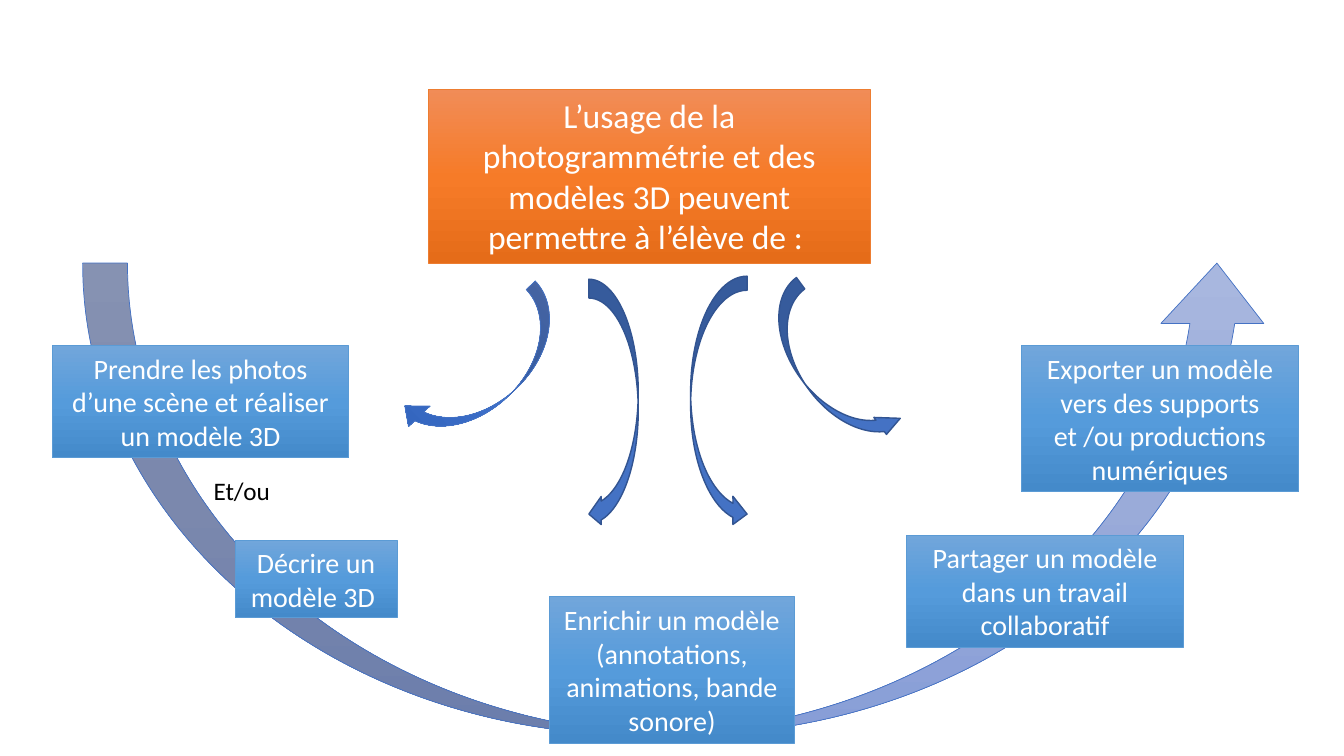
from dataclasses import dataclass

from lxml import etree
from pptx import Presentation
from pptx.dml.color import RGBColor
from pptx.enum.shapes import MSO_SHAPE
from pptx.enum.text import MSO_ANCHOR, MSO_AUTO_SIZE, PP_ALIGN
from pptx.util import Inches, Pt

RECT = MSO_SHAPE.RECTANGLE
UP = MSO_SHAPE.CURVED_UP_ARROW
LEFT = MSO_SHAPE.CURVED_LEFT_ARROW
RIGHT = MSO_SHAPE.CURVED_RIGHT_ARROW
TOP = MSO_ANCHOR.TOP
MIDDLE = MSO_ANCHOR.MIDDLE
FIXED = MSO_AUTO_SIZE.NONE
CENTER = PP_ALIGN.CENTER
START = PP_ALIGN.LEFT


@dataclass(frozen=True)
class Theme:
    """Colours, type sizes and line widths of the slide."""

    font: str = "Calibri"
    head: int = 24
    body: int = 20
    note: int = 18
    white: str = "FFFFFF"
    black: str = "000000"
    blue: str = "4472C4"
    navy: str = "325491"
    sky: str = "5B9BD5"
    orange: str = "ED7D31"
    sweep: tuple = ("A8B7DF", "9AABD9", "889ED7")
    step: tuple = ("71A6DB", "559BDB", "448ACA")
    title: tuple = ("F18C57", "F67B28", "E56C19")
    curve: tuple = ("6183CB", "3E70CA", "3062BB")
    thin: float = 0.5
    bold: float = 1


THEME = Theme()

STEPS = [
    ((0.52, 3.43, 2.94, 1.11), "Prendre les photos d’une scène et réaliser un modèle 3D"),
    ((2.33, 5.36, 1.61, 0.77), "Décrire un modèle 3D "),
    ((5.45, 5.92, 2.43, 1.45), "Enrichir un modèle (annotations, animations, bande sonore)"),
    ((8.99, 5.31, 2.75, 1.11), "Partager un modèle dans un travail collaboratif"),
    ((10.13, 3.43, 2.75, 1.45), "Exporter un modèle vers des supports et /ou productions numériques"),
]

ARROWS = [
    (RIGHT, (7.94, 2.74, 0.56, 1.84), 323.6, (0.25, 0.375, 0.366)),
    (LEFT, (5.84, 2.77, 0.49, 2.47), 0, (0.382, 0.569, 0.25)),
    (RIGHT, (6.85, 2.74, 0.56, 2.5), 0, (0.25, 0.5, 0.25)),
]


def shade(shape, tones):
    """Fill a shape with an even gradient from top to bottom."""
    shape.fill.gradient()
    grad = shape.fill._fill._gradFill
    stops = grad.gsLst
    tag = stops[0].tag
    for stop in list(stops):
        stops.remove(stop)
    for i, tone in enumerate(tones):
        stop = etree.SubElement(stops, tag, pos=str(i * 100000 // (len(tones) - 1)))
        etree.SubElement(stop, tag.replace("}gs", "}srgbClr"), val=tone)
    shape.fill.gradient_angle = 270


def paint(shape, fill, line, width):
    """Set the fill and outline of a shape."""
    if isinstance(fill, tuple):
        shade(shape, fill)
    else:
        shape.fill.solid()
        shape.fill.fore_color.rgb = RGBColor.from_string(fill)
    shape.line.color.rgb = RGBColor.from_string(line)
    shape.line.width = Pt(width)


def write(shape, text, size, color, align=CENTER, anchor=TOP):
    """Put formatted text in a shape."""
    frame = shape.text_frame
    frame.text = text
    frame.word_wrap = True
    frame.auto_size = FIXED
    frame.vertical_anchor = anchor
    para = frame.paragraphs[0]
    para.alignment = align
    for run in para.runs:
        run.font.name = THEME.font
        run.font.size = Pt(size)
        run.font.color.rgb = RGBColor.from_string(color)


def add_title(slide, box, text):
    """Move and format the title placeholder."""
    title = slide.shapes.title
    title.left, title.top, title.width, title.height = map(Inches, box)
    paint(title, THEME.title, THEME.orange, THEME.thin)
    write(title, text, THEME.head, THEME.white)


def add_step(slide, box, text):
    """Add one blue box of the path."""
    shape = slide.shapes.add_shape(RECT, *map(Inches, box))
    shape.shadow.inherit = False
    paint(shape, THEME.step, THEME.sky, THEME.thin)
    write(shape, text, THEME.body, THEME.white, anchor=MIDDLE)


def add_arrow(slide, kind, box, turn, bends, fill, line, width):
    """Add a curved block arrow."""
    shape = slide.shapes.add_shape(kind, *map(Inches, box))
    shape.shadow.inherit = False
    shape.rotation = turn
    for i, bend in enumerate(bends):
        shape.adjustments[i] = bend
    paint(shape, fill, line, width)


def add_note(slide, box, text):
    """Add a plain text label."""
    note = slide.shapes.add_textbox(*map(Inches, box))
    write(note, text, THEME.note, THEME.black, START)


def main():
    """Build and save the slide."""
    deck = Presentation()
    deck.slide_width = Inches(13.33)
    deck.slide_height = Inches(7.5)
    slide = deck.slides.add_slide(deck.slide_layouts[5])
    add_title(slide, (4.25, 0.89, 4.38, 1.72),
              "L’usage de la photogrammétrie et des modèles 3D peuvent permettre à l’élève de : ")
    add_arrow(slide, UP, (0.82, 2.61, 11.76, 4.68), 0, (0.095, 0.218, 0.128),
              THEME.sweep, THEME.blue, THEME.thin)
    for box, text in STEPS:
        add_step(slide, box, text)
    add_arrow(slide, LEFT, (4.51, 2.72, 0.64, 1.94), 46.2, (0.194, 0.462, 0.271),
              THEME.curve, THEME.blue, THEME.thin)
    for kind, box, turn, bends in ARROWS:
        add_arrow(slide, kind, box, turn, bends, THEME.blue, THEME.navy, THEME.bold)
    add_note(slide, (2.02, 4.67, 1.06, 0.4), "Et/ou")
    deck.save("out.pptx")


if __name__ == "__main__":
    main()
